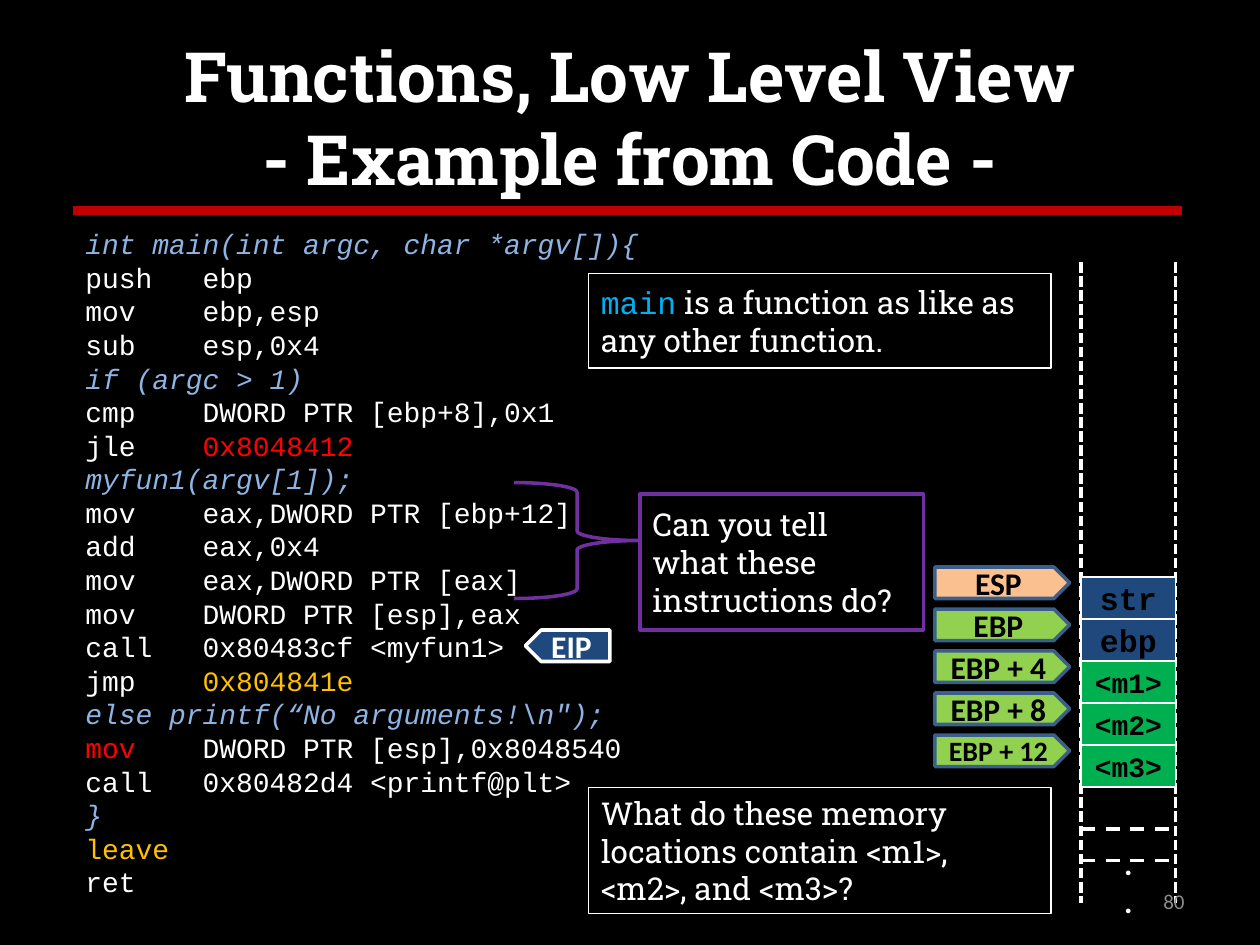
import pptx
import pptx.dml.color
import pptx.enum.dml
import pptx.enum.shapes
import pptx.enum.text
import pptx.oxml
import pptx.util
from dataclasses import dataclass

Inches = pptx.util.Inches
Pt = pptx.util.Pt
SHAPE = pptx.enum.shapes.MSO_SHAPE
DASH = pptx.enum.dml.MSO_LINE
ALIGN = pptx.enum.text.PP_ALIGN
ANCHOR = pptx.enum.text.MSO_ANCHOR


@dataclass(frozen=True)
class Theme:
    # Colours
    black: str = "000000"
    white: str = "FFFFFF"
    rule: str = "C00000"
    source: str = "8EB4E3"
    red: str = "FF0000"
    amber: str = "FFC000"
    cyan: str = "00B0F0"
    navy: str = "1F497D"
    green: str = "00B050"
    lime: str = "92D050"
    peach: str = "FAC090"
    tag_border: str = "3A5F8C"
    purple: str = "7030A0"
    grey: str = "8C8C8C"
    # Fonts and sizes
    slab: str = "Roboto Slab"
    mono: str = "Courier New"
    sans: str = "Calibri"
    title: float = 39.6
    body: float = 18
    code: float = 16
    number: float = 12


THEME = Theme()

STACK_LEFT, STACK_RIGHT = 8.58, 9.33
ROW_STEP = 1 / 3


def rgb(color):
    return pptx.dml.color.RGBColor.from_string(color)


def set_font(font, size, name, color, bold=False, italic=False):
    font.size, font.name = Pt(size), name
    font.bold, font.italic = bold, italic
    font.color.rgb = rgb(color)


def write(shape, text, size, name, color, bold=False, align=ALIGN.CENTER, wrap=True):
    """Fill a shape with evenly styled, vertically centred paragraphs."""
    frame = shape.text_frame
    frame.word_wrap = wrap
    frame.vertical_anchor = ANCHOR.MIDDLE
    frame.text = text
    for paragraph in frame.paragraphs:
        paragraph.alignment = align
        set_font(paragraph.font, size, name, color, bold)


def add_text_box(slide, left, top, width, height):
    return slide.shapes.add_textbox(Inches(left), Inches(top), Inches(width), Inches(height))


def add_shape(slide, kind, left, top, width, height, fill, border, weight):
    shape = slide.shapes.add_shape(
        kind, Inches(left), Inches(top), Inches(width), Inches(height))
    shape.shadow.inherit = False
    if fill:
        shape.fill.solid()
        shape.fill.fore_color.rgb = rgb(fill)
    else:
        shape.fill.background()
    shape.line.color.rgb = rgb(border)
    shape.line.width = Pt(weight)
    return shape


def add_line(slide, start, end, color, weight, dash=None):
    line = slide.shapes.add_connector(
        pptx.enum.shapes.MSO_CONNECTOR.STRAIGHT, *map(Inches, start + end))
    line.line.color.rgb = rgb(color)
    line.line.width = Pt(weight)
    if dash:
        line.line.dash_style = dash
    properties = line._element.spPr
    properties.append(properties.makeelement(pptx.oxml.ns.qn("a:effectLst"), {}))


def add_tag(slide, label, left, top, width, fill, border, color, size=THEME.body, flip=False):
    """Arrow-shaped register label."""
    tag = add_shape(slide, SHAPE.PENTAGON, left, top, width, 0.25, fill, border, 2)
    if flip:
        tag._element.spPr.find(pptx.oxml.ns.qn("a:xfrm")).set("flipH", "1")
    write(tag, label, size, THEME.sans, color, bold=True, wrap=False)


def add_note(slide, text, left, top, width, height, border, weight):
    note = add_shape(slide, SHAPE.RECTANGLE, left, top, width, height, None, border, weight)
    write(note, text, THEME.body, THEME.slab, THEME.white, align=ALIGN.LEFT)
    return note


def source(text):
    return [(text, THEME.source)]


def asm(operation, operands="", color=THEME.white, operand_color=THEME.white):
    """Instruction with its operands in column 7."""
    if not operands:
        return [(operation, color)]
    if color == operand_color:
        return [(operation.ljust(7) + operands, color)]
    return [(operation.ljust(7), color), (operands, operand_color)]


def add_listing(slide):
    lines = [
        source("int main(int argc, char *argv[]){"),
        asm("push", "ebp"),
        asm("mov", "ebp,esp"),
        asm("sub", "esp,0x4"),
        source("if (argc > 1)"),
        asm("cmp", "DWORD PTR [ebp+8],0x1"),
        asm("jle", "0x8048412", operand_color=THEME.red),
        source("myfun1(argv[1]);"),
        asm("mov", "eax,DWORD PTR [ebp+12]"),
        asm("add", "eax,0x4"),
        asm("mov", "eax,DWORD PTR [eax]"),
        asm("mov", "DWORD PTR [esp],eax"),
        asm("call", "0x80483cf <myfun1>"),
        asm("jmp", "0x804841e", operand_color=THEME.amber),
        source("else printf(“No arguments!\\n\");"),
        asm("mov", "DWORD PTR [esp],0x8048540", color=THEME.red),
        asm("call", "0x80482d4 <printf@plt>"),
        source("}"),
        asm("leave", color=THEME.amber),
        asm("ret"),
    ]
    frame = add_text_box(slide, 0.58, 1.75, 6, 5.49).text_frame
    frame.word_wrap = True
    frame.auto_size = pptx.enum.text.MSO_AUTO_SIZE.SHAPE_TO_FIT_TEXT
    for index, parts in enumerate(lines):
        paragraph = frame.add_paragraph() if index else frame.paragraphs[0]
        color = parts[0][1]
        set_font(paragraph.font, THEME.code, THEME.mono, color, italic=color == THEME.source)
        for text, part_color in parts:
            run = paragraph.add_run()
            run.text = text
            if part_color != color:
                run.font.color.rgb = rgb(part_color)


def add_stack(slide):
    # Dashed outline of memory and the continuation dots
    for x in (STACK_LEFT, STACK_RIGHT):
        add_line(slide, (x, 2.08), (x, 7.17), THEME.white, 2, DASH.SQUARE_DOT)
    for y in (6.58, 6.83):
        add_line(slide, (STACK_LEFT, y), (STACK_RIGHT, y), THEME.white, 2, DASH.DASH)
    width = STACK_RIGHT - STACK_LEFT
    dots = add_text_box(slide, STACK_LEFT, 6.75, width, 0.5)
    write(dots, ".\n.", THEME.body, THEME.sans, THEME.white, bold=True)

    # Each stack cell with the register pointing at it
    rows = [
        ("str", THEME.navy, THEME.body, "ESP", THEME.peach, THEME.body),
        ("ebp", THEME.navy, THEME.body, "EBP", THEME.lime, THEME.body),
        ("<m1>", THEME.green, THEME.code, "EBP + 4", THEME.lime, THEME.body),
        ("<m2>", THEME.green, THEME.code, "EBP + 8", THEME.lime, THEME.body),
        ("<m3>", THEME.green, THEME.code, "EBP + 12", THEME.lime, THEME.code),
    ]
    for index, (value, fill, size, register, tag_fill, tag_size) in enumerate(rows):
        offset = index * ROW_STEP
        cell = add_shape(slide, SHAPE.RECTANGLE, STACK_LEFT, 4.58 + offset, width, ROW_STEP,
                         fill, THEME.white, 1)
        write(cell, value, size, THEME.mono, THEME.black, bold=True, wrap=False)
        add_tag(slide, register, 7.42, 4.5 + offset, 1.07, tag_fill, THEME.tag_border,
                THEME.black, tag_size)


def add_notes(slide):
    main_note = add_note(slide, "", 4.67, 2.17, 3.67, 0.75, THEME.white, 1)
    paragraph = main_note.text_frame.paragraphs[0]
    keyword = paragraph.add_run()
    keyword.text = "main"
    keyword.font.name = THEME.mono
    keyword.font.color.rgb = rgb(THEME.cyan)
    paragraph.add_run().text = " is a function as like as any other function."

    add_note(slide, "What do these memory locations contain <m1>, <m2>, and <m3>?",
             4.67, 6.25, 3.67, 1, THEME.white, 1)
    add_note(slide, "Can you tell what these instructions do?",
             5.08, 3.92, 2.25, 1.08, THEME.purple, 2)
    add_shape(slide, SHAPE.RIGHT_BRACE, 4.08, 3.83, 1, 0.92, None, THEME.purple, 2)


def main():
    presentation = pptx.Presentation()
    presentation.slide_width, presentation.slide_height = Inches(10), Inches(7.5)
    slide = presentation.slides.add_slide(presentation.slide_layouts[6])
    slide.background.fill.solid()
    slide.background.fill.fore_color.rgb = rgb(THEME.black)

    # Title and rule
    title = add_text_box(slide, 0.5, 0.3, 9, 1.25)
    write(title, "Functions, Low Level View\v- Example from Code -",
          THEME.title, THEME.slab, THEME.white, bold=True)
    add_line(slide, (0.58, 1.67), (9.38, 1.67), THEME.rule, 5)

    # Code, stack and remarks
    add_listing(slide)
    add_stack(slide)
    add_tag(slide, "EIP", 4.17, 5, 0.67, THEME.navy, THEME.white, THEME.white, flip=True)
    add_notes(slide)

    # Slide number
    number = add_text_box(slide, 7.17, 6.95, 2.33, 0.4)
    write(number, "80", THEME.number, THEME.sans, THEME.grey, align=ALIGN.RIGHT)

    presentation.save("out.pptx")


if __name__ == "__main__":
    main()
